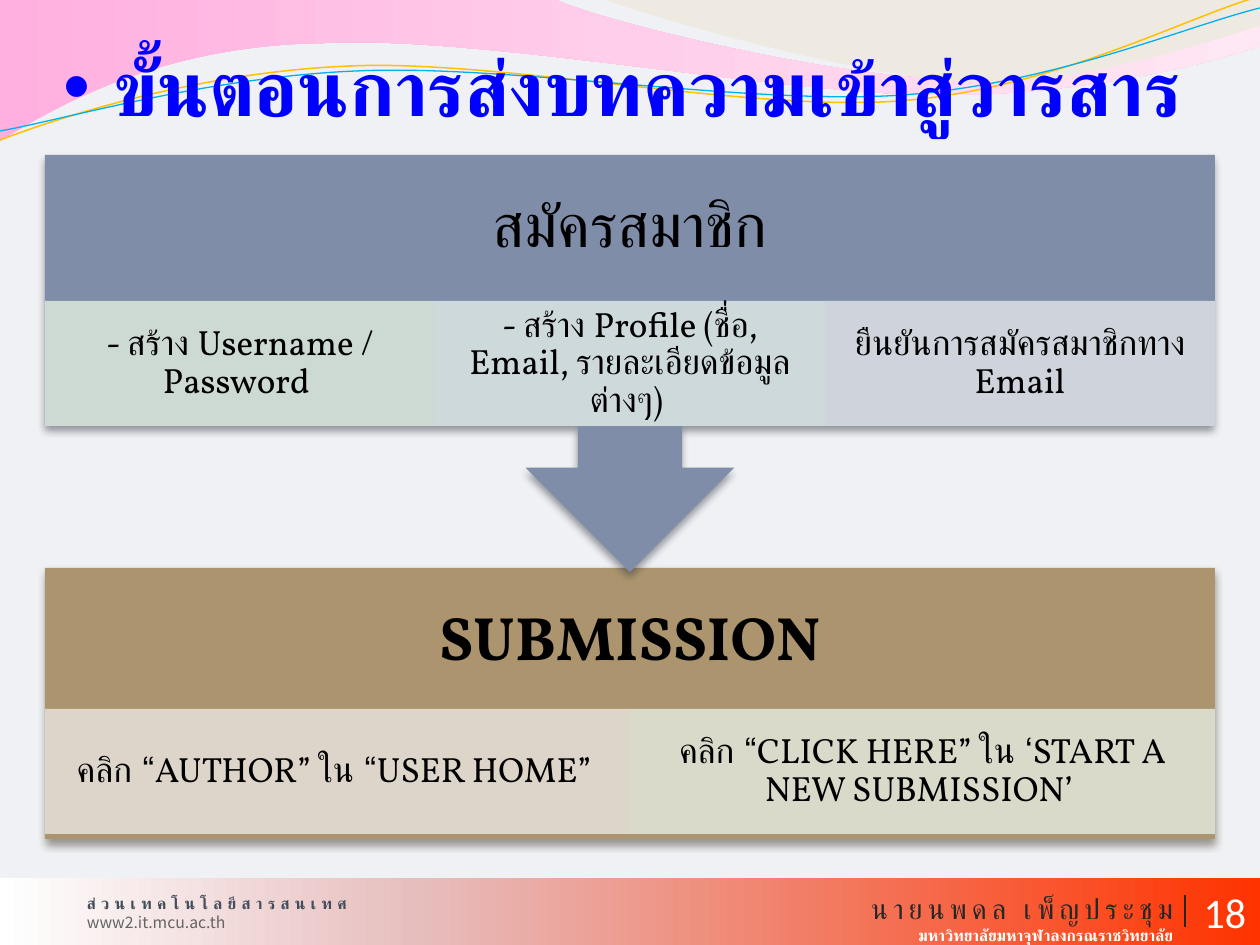
from lxml import etree
from pptx import Presentation
from pptx.dml.color import RGBColor
from pptx.enum.shapes import MSO_CONNECTOR, MSO_SHAPE
from pptx.enum.text import MSO_ANCHOR, MSO_AUTO_SIZE, PP_ALIGN
from pptx.oxml import parse_xml
from pptx.oxml.ns import nsdecls, qn
from pptx.util import Pt

RECT, CALLOUT = MSO_SHAPE.RECTANGLE, MSO_SHAPE.DOWN_ARROW_CALLOUT
LEFT, CENTER, RIGHT = PP_ALIGN.LEFT, PP_ALIGN.CENTER, PP_ALIGN.RIGHT
TOP, MIDDLE, BOTTOM = MSO_ANCHOR.TOP, MSO_ANCHOR.MIDDLE, MSO_ANCHOR.BOTTOM
PX = 914400 / 126
rgb = RGBColor.from_string


def wave(start, segments, closed):
    """Draw an outline whose segments are lines (x, y) or cubic curves (six numbers)."""
    points = [(segment[i] * PX, segment[i + 1] * PX)
              for segment in segments for i in range(0, len(segment), 2)]
    builder = shapes.build_freeform(start[0] * PX, start[1] * PX, scale=1.0)
    builder.add_line_segments(points, close=closed)
    outline = builder.convert_to_shape()
    outline.shadow.inherit = False
    line_steps = iter(list(outline._element.iter(qn("a:lnTo"))))
    for segment in segments:
        first = next(line_steps)
        if len(segment) == 6:
            first.tag = qn("a:cubicBezTo")
            for _ in range(2):
                following = next(line_steps)
                first.append(following[0])
                following.getparent().remove(following)
    return outline


def write(shape, lines, align, anchor, margins=(13, 6), spacing=None):
    """Fill a shape with lines of (text, font, size, colour, bold, letter spacing)."""
    frame = shape.text_frame
    frame.word_wrap = True
    frame.vertical_anchor = anchor
    frame.margin_left = frame.margin_right = int(margins[0] * PX)
    frame.margin_top = frame.margin_bottom = int(margins[1] * PX)
    frame.text = "\n".join(line[0] for line in lines)
    for paragraph, (_, font, size, color, bold, tracking) in zip(frame.paragraphs, lines):
        paragraph.alignment = align
        paragraph.line_spacing = spacing
        run = paragraph.runs[0]
        run.font.name, run.font.size, run.font.bold = font, Pt(size), bold
        run.font.color.rgb = rgb(color)
        if tracking:
            run.font._element.set("spc", str(tracking * 100))


prs = Presentation()
prs.slide_width, prs.slide_height = int(1260 * PX), int(945 * PX)
slide = prs.slides.add_slide(prs.slide_layouts[5])
shapes = slide.shapes
slide.background.fill.solid()
slide.background.fill.fore_color.rgb = rgb("EFF1F4")

# Header waves
pink_wave = wave((0, 0), [
    (554, -1), (600, 21, 837, 79, 955, 79), (1074, 79, 1207, 33, 1260, 11),
    (1261, 45), (1239, 55, 1096, 96, 940, 95), (784, 95, 481, 35, 324, 43),
    (163, 45, 58, 105, -1, 142), (0, 0)], True)
sand_wave = wave((604, -1), [
    (641, 14, 859, 78, 969, 82), (1079, 87, 1211, 40, 1260, 26), (1260, 0),
    (604, -1)], True)
sand_wave.fill.solid()
sand_wave.fill.fore_color.rgb = rgb("EEEAE2")
sand_wave.line.fill.background()

strands = [
    ("FFC000", 0.85, (0, 140), [(60, 117, 199, 72, 349, 66),
                                (498, 59, 747, 112, 898, 101),
                                (1050, 90, 1182, 19, 1257, -3)]),
    ("00B0F0", 0.75, (0, 131), [(59, 121, 207, 77, 357, 71),
                                (508, 64, 752, 106, 903, 95),
                                (1053, 84, 1187, 26, 1260, 8)]),
]
for color, weight, start, curves in strands:
    strand = wave(start, curves, False)
    strand.fill.background()
    strand.line.color.rgb = rgb(color)
    strand.line.width = Pt(weight)

# Footer band, with the gradients of band and wave
footer_band = shapes.add_shape(RECT, 0, int(878 * PX), int(1260 * PX), int(67 * PX))
footer_band.shadow.inherit = False
gradients = [
    (pink_wave, [(0, "FFAFDF"), (50, "FFCEEA"), (100, "FFE7F4")]),
    (footer_band, [(0, "FFFFFF"), (33, "E7BEBE"), (100, "FF3300")]),
]
for shape, stops in gradients:
    shape.line.fill.background()
    shape.fill.gradient()
    shape.fill.gradient_angle = 0
    stop_list = shape._element.spPr.find(qn("a:gradFill")).find(qn("a:gsLst"))
    for old_stop in list(stop_list):
        stop_list.remove(old_stop)
    for position, color in stops:
        stop = etree.SubElement(stop_list, qn("a:gs"), pos=str(position * 1000))
        etree.SubElement(stop, qn("a:srgbClr"), val=color)

footer_texts = [
    ((720, 886, 466, 59), RIGHT, [
        ("นายนพดล เพ็ญประชุม", "Arial", 16, "262626", False, 3),
        ("มหาวิทยาลัยมหาจุฬาลงกรณราชวิทยาลัย", "Arial", 9, "FFFFFF", True, 0)]),
    ((74, 888, 466, 50), LEFT, [
        ("ส่วนเทคโนโลยีสารสนเทศ", "Noto Sans CJK SC", 9, "424E5B", True, 3),
        ("www2.it.mcu.ac.th", "Noto Sans CJK SC", 9, "646464", False, 0)]),
    ((1187, 881, 76, 63), CENTER, [("18", "Calibri", 24, "FFFFFF", False, 0)]),
]
for box, align, lines in footer_texts:
    write(shapes.add_textbox(*(int(v * PX) for v in box)), lines, align, TOP)

divider = shapes.add_connector(MSO_CONNECTOR.STRAIGHT, int(1185 * PX), int(895 * PX),
                               int(1185 * PX), int(927 * PX))
divider.line.color.rgb = rgb("262626")
divider.line.width = Pt(1.5)
etree.SubElement(divider._element.spPr, qn("a:effectLst"))

# Title
title = shapes.title
title.left, title.top, title.width, title.height = (int(v * PX) for v in (63, 33, 1134, 99))
title.text_frame.auto_size = MSO_AUTO_SIZE.NONE
write(title, [("ขั้นตอนการส่งบทความเข้าสู่วารสาร", "Calibri", 44, "0000FF", True, 0)],
      LEFT, BOTTOM, (0, 0))
bullet_props = title.text_frame.paragraphs[0]._p.get_or_add_pPr()
bullet_props.set("marL", str(int(50 * PX)))
bullet_props.set("indent", str(int(-50 * PX)))
etree.SubElement(bullet_props, qn("a:buFont"), typeface="Arial")
etree.SubElement(bullet_props, qn("a:buChar"), char="•")
shapes._spTree.append(title._element)

# Steps, the lower one first so that the arrow lies over it
STEP_LEFT, STEP_WIDTH, CELL_HEIGHT = 45, 1170, 125
steps = [
    (RECT, 568, 271, 709, "AC956E", "3D3426", "SUBMISSION", True, [
        ("คลิก “AUTHOR” ใน “USER HOME” ", "E3DDD5"),
        ("คลิก “CLICK HERE” ใน ‘START A NEW SUBMISSION’ ", "DEE2D5")]),
    (CALLOUT, 155, 417, 301, "808DA9", "2D313C", "สมัครสมาชิก", False, [
        ("- สร้าง Username / Password ", "D6E2D8"),
        ("- สร้าง Profile (ชื่อ, Email, รายละเอียดข้อมูลต่างๆ) ", "D7E2E1"),
        ("ยืนยันการสมัครสมาชิกทาง Email", "D8DBE2")]),
]
for kind, top, height, cell_top, color, shade, name, bold, cells in steps:
    block = shapes.add_shape(kind, int(STEP_LEFT * PX), int(top * PX),
                             int(STEP_WIDTH * PX), int(height * PX))
    block.fill.solid()
    block.fill.fore_color.rgb = rgb(color)
    block.line.fill.background()
    block._element.spPr.append(parse_xml(
        f'<a:effectLst {nsdecls("a")}><a:outerShdw blurRad="{Pt(4.5)}" dist="{Pt(3)}" '
        f'dir="5400000" rotWithShape="0"><a:srgbClr val="{shade}"><a:alpha val="48000"/>'
        '</a:srgbClr></a:outerShdw></a:effectLst>'))
    step_name = shapes.add_textbox(int(STEP_LEFT * PX), int(top * PX),
                                   int(STEP_WIDTH * PX), int(146 * PX))
    write(step_name, [(name, "Vollkorn", 35, "000000", bold, 0)], CENTER, MIDDLE, (34, 34), 0.9)

    cell_width = STEP_WIDTH // len(cells)
    for index, (action, tint) in enumerate(cells):
        cell = shapes.add_shape(RECT, int((STEP_LEFT + index * cell_width) * PX),
                                int(cell_top * PX), int(cell_width * PX), int(CELL_HEIGHT * PX))
        cell.shadow.inherit = False
        cell.fill.solid()
        cell.fill.fore_color.rgb = rgb(tint)
        tint_element = cell._element.spPr.find(qn("a:solidFill"))[0]
        etree.SubElement(tint_element, qn("a:alpha"), val="90000")
        cell.line.fill.background()
        write(cell, [(action, "Vollkorn", 20, "000000", False, 0)], CENTER, MIDDLE, (20, 4), 0.9)

prs.save("out.pptx")
